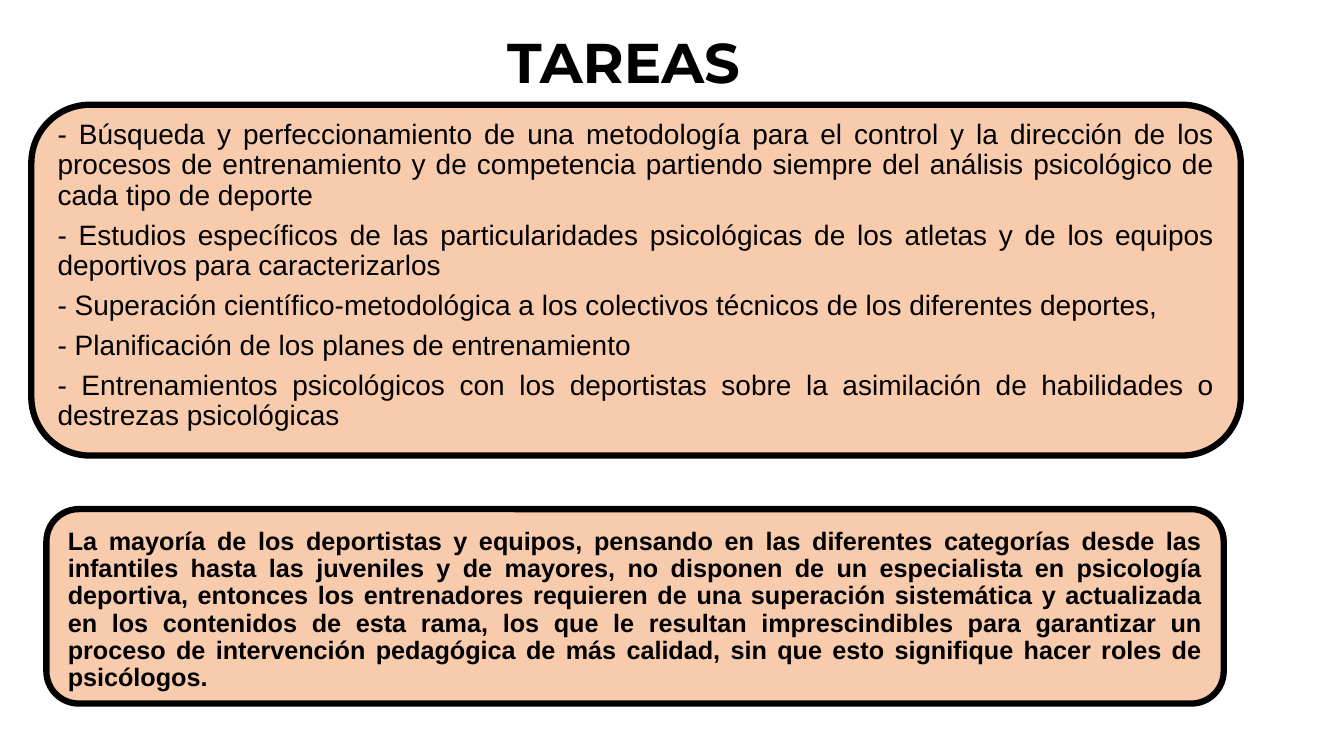
from dataclasses import dataclass

from pptx import Presentation
from pptx.dml.color import RGBColor
from pptx.enum.shapes import MSO_SHAPE
from pptx.enum.text import MSO_ANCHOR, PP_ALIGN
from pptx.util import Cm, Pt


@dataclass(frozen=True)
class Theme:
    ink: RGBColor = RGBColor(0x00, 0x00, 0x00)
    panel: RGBColor = RGBColor(0xF8, 0xCB, 0xAD)
    title_font: str = "Montserrat"
    body_font: str = "Arial"
    title_size: int = 40
    task_size: int = 20
    note_size: int = 18
    border: float = 4.5
    line_spacing: float = 0.9
    gap: float = 0.35


THEME = Theme()

TASKS = [
    "- Búsqueda y perfeccionamiento de una metodología para el control y la dirección de los "
    "procesos de entrenamiento y de competencia partiendo siempre del análisis psicológico de "
    "cada tipo de deporte",
    "- Estudios específicos de las particularidades psicológicas de los atletas y de los equipos "
    "deportivos para caracterizarlos",
    "- Superación científico-metodológica a los colectivos técnicos de los diferentes deportes,",
    "- Planificación de los planes de entrenamiento",
    "- Entrenamientos psicológicos con los deportistas sobre la asimilación de habilidades o "
    "destrezas psicológicas",
]

NOTE = [
    "La mayoría de los deportistas y equipos, pensando en las diferentes categorías desde las "
    "infantiles hasta las juveniles y de mayores, no disponen de un especialista en psicología "
    "deportiva, entonces los entrenadores requieren de una superación sistemática y actualizada "
    "en los contenidos de esta rama, los que le resultan imprescindibles para garantizar un "
    "proceso de intervención pedagógica de más calidad, sin que esto signifique hacer roles de "
    "psicólogos.",
]


def apply(target, values):
    for name, value in values.items():
        setattr(target, name, value)


def write(tf, lines, font, paragraph):
    for i, line in enumerate(lines):
        p = tf.paragraphs[0] if i == 0 else tf.add_paragraph()
        apply(p, paragraph)
        r = p.add_run()
        r.text = line
        apply(r.font, font)
        r.font.color.rgb = THEME.ink


def add_title(s, text, box):
    tf = s.shapes.add_textbox(*map(Cm, box)).text_frame
    apply(tf, {"word_wrap": True, "vertical_anchor": MSO_ANCHOR.MIDDLE})
    font = {"name": THEME.title_font, "size": Pt(THEME.title_size), "bold": True}
    write(tf, [text], font, {"alignment": PP_ALIGN.CENTER})


def add_panel(s, lines, box, size, bold, margins):
    sp = s.shapes.add_shape(MSO_SHAPE.FLOWCHART_ALTERNATE_PROCESS, *map(Cm, box))
    sp.shadow.inherit = False
    sp.fill.solid()
    sp.fill.fore_color.rgb = THEME.panel
    sp.line.color.rgb = THEME.ink
    sp.line.width = Pt(THEME.border)
    tf = sp.text_frame
    apply(tf, {"word_wrap": True, "vertical_anchor": MSO_ANCHOR.MIDDLE})
    apply(tf, {f"margin_{side}": Cm(value) for side, value in margins.items()})
    font = {"name": THEME.body_font, "size": Pt(size), "bold": bold}
    paragraph = {
        "alignment": PP_ALIGN.JUSTIFY,
        "line_spacing": THEME.line_spacing,
        "space_after": Pt(size * THEME.gap),
    }
    write(tf, lines, font, paragraph)


def main():
    prs = Presentation()
    apply(prs, {"slide_width": Cm(33.87), "slide_height": Cm(19.05)})
    s = prs.slides.add_slide(prs.slide_layouts[6])
    add_title(s, "TAREAS", (2.9, 0.56, 25.63, 1.96))
    add_panel(s, NOTE, (1.17, 12.83, 29.67, 4.9), THEME.note_size, True,
              {"left": 0.3, "right": 0.3, "top": 0.3, "bottom": 0.1})
    add_panel(s, TASKS, (0.79, 2.64, 30.48, 8.84), THEME.task_size, False,
              {"left": 0.23, "right": 0.23, "top": 0.23, "bottom": 0.43})
    prs.save("out.pptx")


if __name__ == "__main__":
    main()
